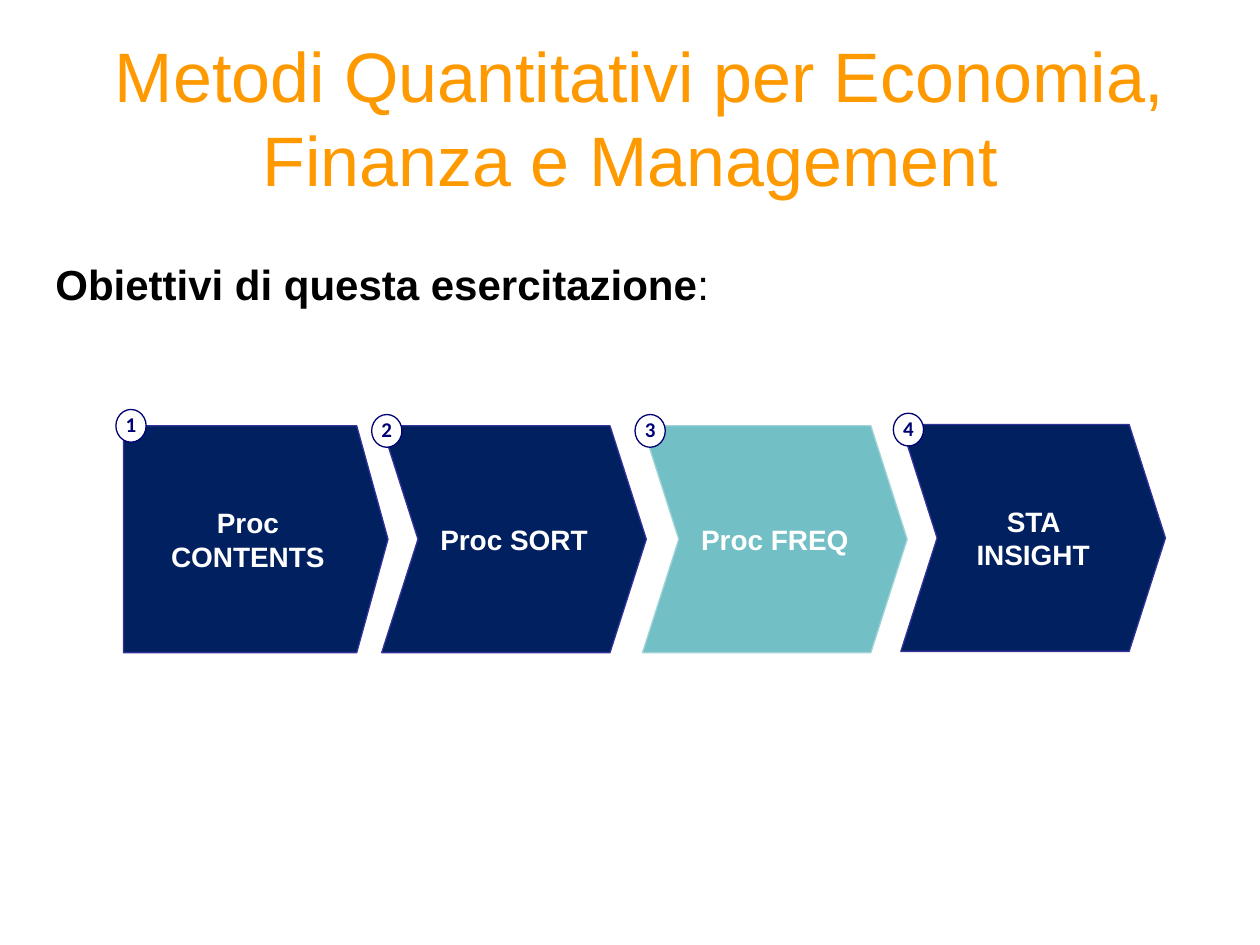
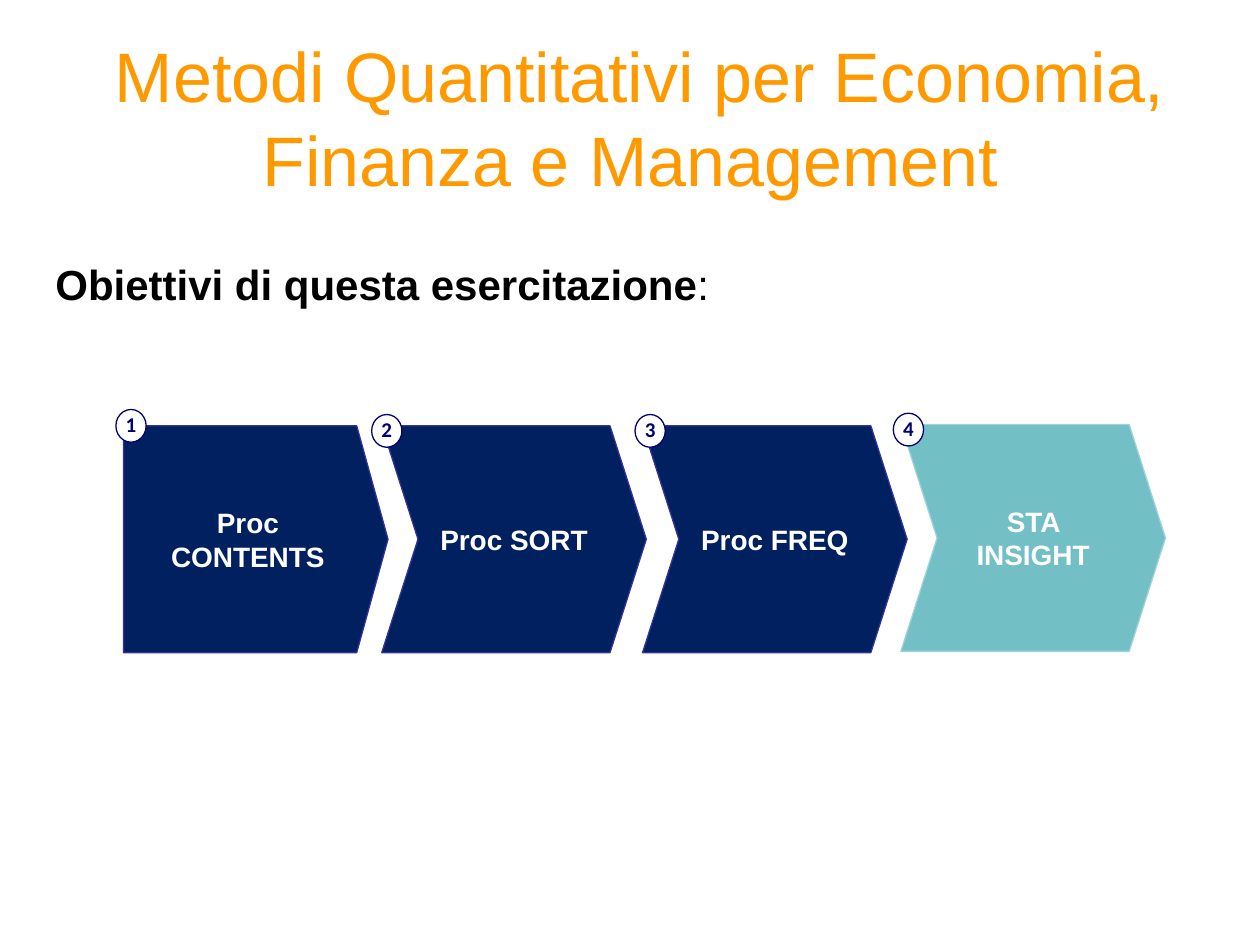
from pptx import Presentation
from pptx.dml.color import RGBColor
from pptx.enum.shapes import MSO_SHAPE
from pptx.enum.text import MSO_ANCHOR, MSO_AUTO_SIZE, PP_ALIGN
from pptx.util import Inches, Pt

# Content
TITLE = " Metodi Quantitativi per Economia, Finanza e Management"
GOAL = "Obiettivi di questa esercitazione"
# label, arrow left and top, badge left and top
STEPS = [
    ("Proc\nCONTENTS", (0.98, 3.38), (0.92, 3.25)),
    ("Proc SORT", (3.03, 3.38), (2.95, 3.29)),
    ("Proc FREQ", (5.1, 3.38), (5.04, 3.29)),
    ("STA INSIGHT", (7.15, 3.37), (7.09, 3.28)),
]
ACTIVE = [3, 4]  # highlighted step on each slide

# Shared style
ORANGE, BLACK, WHITE, INK = "FF9900", "000000", "FFFFFF", "000074"
PLAIN = ("002060", "333399")  # fill, line
LIT = ("72BFC5", "9ED3D7")
ARROW, BADGE = (2.1, 1.8), (0.24, 0.26)


def color(code):
    return RGBColor.from_string(code)


def put(shape, text, tail="", size=16, font="Arial", ink=WHITE, bold=True,
        align=PP_ALIGN.CENTER, anchor=MSO_ANCHOR.MIDDLE, wrap=True,
        pad=(0.1, 0.05), left=None, space=None):
    """Write text, then an optional tail that is never bold."""
    frame = shape.text_frame
    frame.auto_size = MSO_AUTO_SIZE.NONE
    frame.word_wrap = wrap
    frame.vertical_anchor = anchor
    frame.margin_left = Inches(pad[0] if left is None else left)
    frame.margin_right = Inches(pad[0])
    frame.margin_top = frame.margin_bottom = Inches(pad[1])
    para = frame.paragraphs[0]
    para.text = text.replace("\n", "\v")
    para.alignment = align
    para.space_before = Pt(0)
    if space:
        para.line_spacing = space
    main = len(para.runs)
    if tail:
        para.add_run().text = tail
    for i, run in enumerate(para.runs):
        run.font.size, run.font.name = Pt(size), font
        run.font.bold = bold and i < main
        run.font.color.rgb = color(ink)


def draw(slide, kind, spot, size, fill, line):
    shape = slide.shapes.add_shape(kind, *map(Inches, spot + size))
    shape.shadow.inherit = False
    shape.fill.solid()
    shape.fill.fore_color.rgb = color(fill)
    shape.line.color.rgb = color(line)
    shape.line.width = Pt(0.75)
    return shape


def build(deck, active):
    slide = deck.slides.add_slide(deck.slide_layouts[5])

    # Title and goal
    title = slide.shapes.title
    title.left, title.top = Inches(0.5), Inches(0.3)
    title.width, title.height = Inches(9), Inches(1.25)
    put(title, TITLE, size=40, ink=ORANGE, bold=False)
    goal = slide.shapes.add_textbox(*map(Inches, (0.25, 2, 9.5, 3.53)))
    put(goal, GOAL, tail=":", size=24, ink=BLACK, align=PP_ALIGN.LEFT,
        anchor=MSO_ANCHOR.TOP, left=0.19)

    # Numbered arrows
    for num, (label, spot, corner) in enumerate(STEPS, 1):
        first = num == 1
        kind = MSO_SHAPE.PENTAGON if first else MSO_SHAPE.CHEVRON
        arrow = draw(slide, kind, spot, ARROW, *(LIT if num == active else PLAIN))
        arrow.adjustments[0] = 0.138 if first else 0.16
        put(arrow, label, pad=(0.08, 0.04))
        badge = draw(slide, MSO_SHAPE.OVAL, corner, BADGE, WHITE, INK)
        put(badge, str(num), size=12, font="Calibri", ink=INK, wrap=False, space=0.9)


def main():
    deck = Presentation()
    deck.slide_width, deck.slide_height = Inches(10), Inches(7.5)
    for active in ACTIVE:
        build(deck, active)
    deck.save("out.pptx")


if __name__ == "__main__":
    main()
